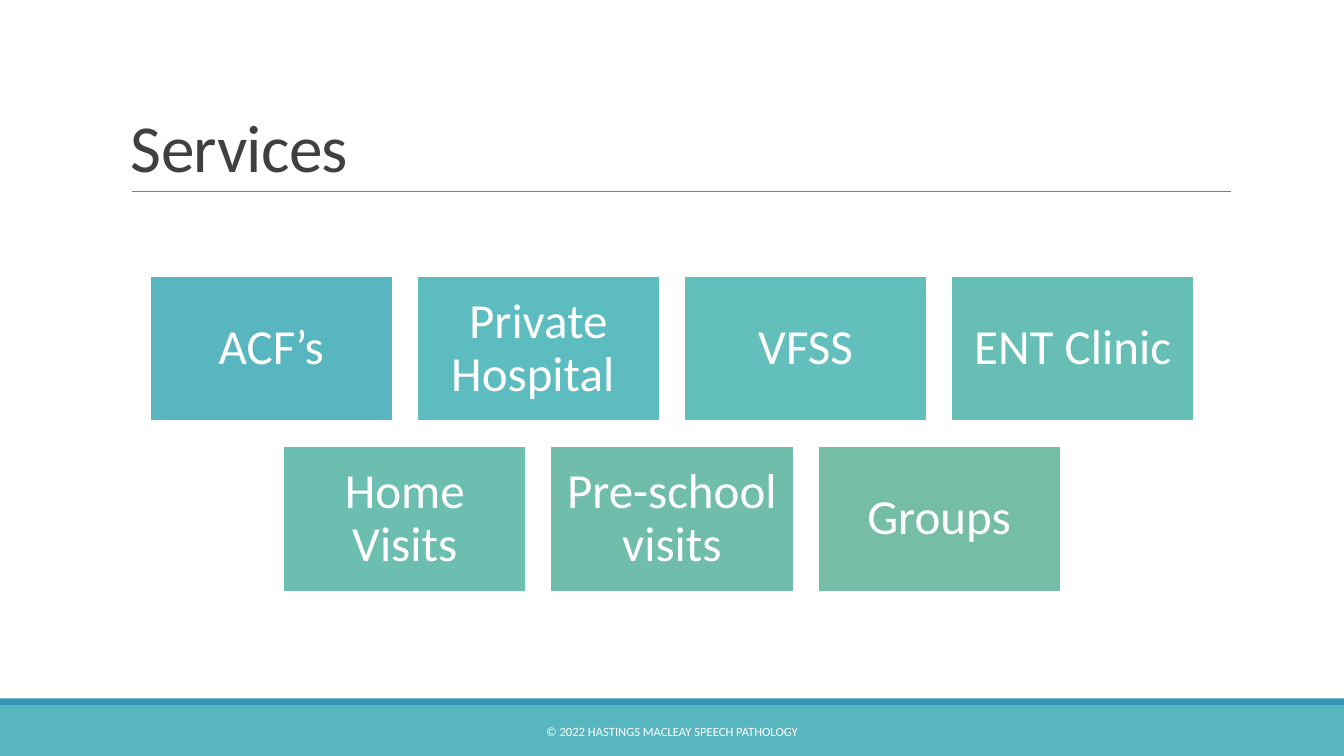
import pptx
import pptx.util
import pptx.dml.color
import pptx.enum.shapes
import pptx.enum.text
from lxml import etree

Inches, Pt = pptx.util.Inches, pptx.util.Pt
RGB = pptx.dml.color.RGBColor
Align, Anchor = pptx.enum.text.PP_ALIGN, pptx.enum.text.MSO_ANCHOR
RECT = pptx.enum.shapes.MSO_SHAPE.RECTANGLE

WHITE = RGB(0xFF, 0xFF, 0xFF)
DARK = RGB(0x40, 0x40, 0x40)
GREY = RGB(0x80, 0x80, 0x80)
TEAL = RGB(0x58, 0xB6, 0xC0)
BLUE = RGB(0x34, 0x94, 0xBA)

WIDE, HIGH = 13.33, 7.5
CARD_W, CARD_H, GAP = 2.41, 1.44, 0.24
TOP, PITCH = 2.74, 1.69

ROWS = [
    [("ACF’s", TEAL),
     ("Private Hospital ", RGB(0x5D, 0xBC, 0xBF)),
     ("VFSS", RGB(0x62, 0xBF, 0xBB)),
     ("ENT Clinic", RGB(0x67, 0xBE, 0xB5))],
    [("Home Visits", RGB(0x6C, 0xBE, 0xB0)),
     ("Pre-school visits", RGB(0x70, 0xBD, 0xAB)),
     ("Groups", RGB(0x75, 0xBD, 0xA7))],
]

deck = pptx.Presentation()
deck.slide_width, deck.slide_height = Inches(WIDE), Inches(HIGH)
slide = deck.slides.add_slide(deck.slide_layouts[6])
shapes = slide.shapes


def add_box(left, top, width, height, fill):
    box = shapes.add_shape(RECT, Inches(left), Inches(top),
                           Inches(width), Inches(height))
    box.shadow.inherit = False
    box.fill.solid()
    box.fill.fore_color.rgb = fill
    box.line.fill.background()
    return box


def set_text(shape, text, size, color, align, anchor):
    frame = shape.text_frame
    frame.word_wrap = True
    frame.vertical_anchor = anchor
    frame.text = text
    para = frame.paragraphs[0]
    para.alignment = align
    font = para.runs[0].font
    font.name, font.size, font.color.rgb = "Calibri", Pt(size), color
    return para


# Footer bands and title rule
add_box(0, 7, WIDE, 0.5, TEAL)
add_box(0, 6.93, WIDE, 0.07, BLUE)
rule = shapes.add_connector(pptx.enum.shapes.MSO_CONNECTOR.STRAIGHT,
                            Inches(1.31), Inches(1.9), Inches(12.21), Inches(1.9))
rule.line.color.rgb = GREY
rule.line.width = Pt(0.5)
etree.SubElement(rule._element.spPr, pptx.oxml.ns.qn("a:effectLst"))

# Title and footer text
title = shapes.add_textbox(Inches(1.2), Inches(0.31), Inches(11), Inches(1.59))
para = set_text(title, "Services", 48, DARK, Align.LEFT, Anchor.BOTTOM)
para.line_spacing = 0.85
para.runs[0].font._element.set("spc", "-50")

foot = shapes.add_textbox(Inches(4.03), Inches(7.06), Inches(5.27), Inches(0.4))
set_text(foot, "© 2022 HASTINGS MACLEAY SPEECH PATHOLOGY", 9, WHITE,
         Align.CENTER, Anchor.MIDDLE)

# Service cards, each row centred on the slide
for row, cards in enumerate(ROWS):
    count = len(cards)
    start = (WIDE - count * CARD_W - (count - 1) * GAP) / 2
    for col, (name, fill) in enumerate(cards):
        card = add_box(start + col * (CARD_W + GAP), TOP + row * PITCH,
                       CARD_W, CARD_H, fill)
        card.line.color.rgb = WHITE
        card.line.width = Pt(1.25)
        frame = card.text_frame
        frame.margin_left = frame.margin_right = Inches(0.15)
        frame.margin_top = frame.margin_bottom = Inches(0.15)
        para = set_text(card, name, 35, WHITE, Align.CENTER, Anchor.MIDDLE)
        para.line_spacing = 0.9

deck.save("out.pptx")
